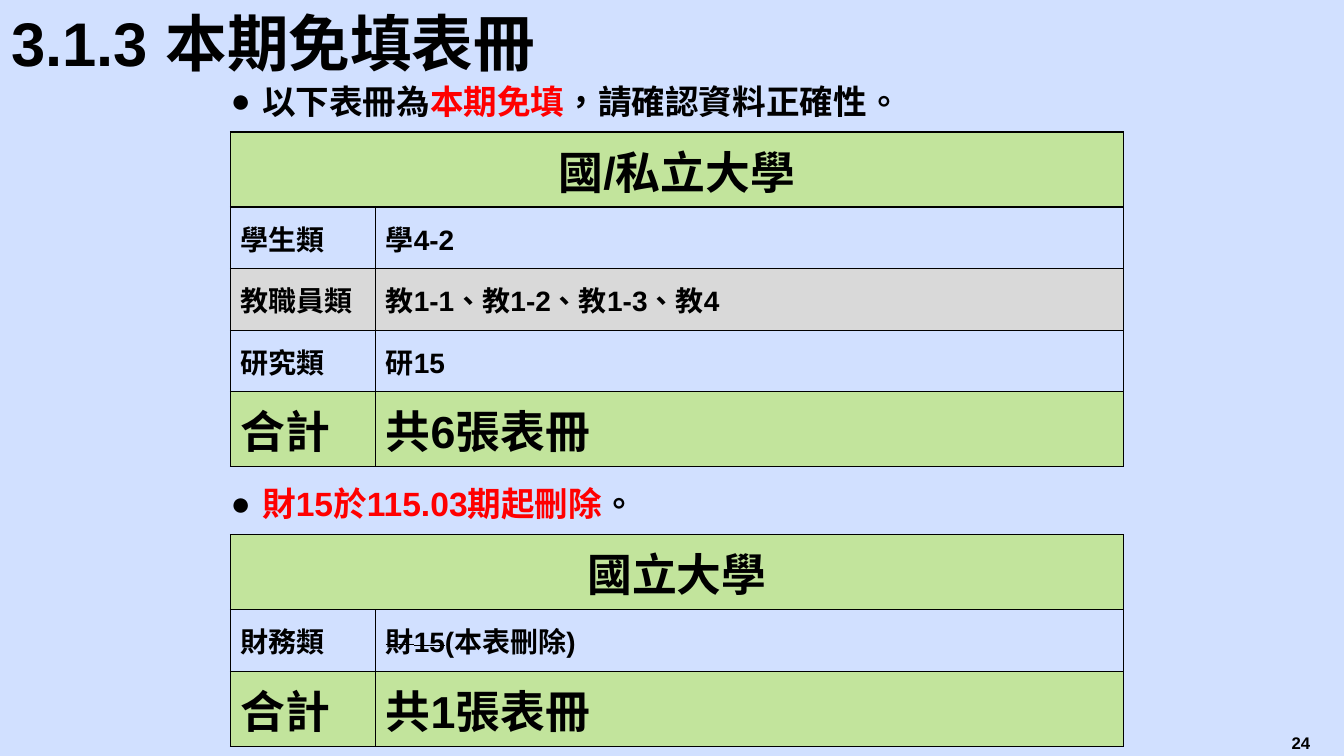
from dataclasses import dataclass

from lxml import etree
from pptx import Presentation
from pptx.dml.color import RGBColor
from pptx.enum.text import MSO_ANCHOR, PP_ALIGN
from pptx.oxml.ns import qn
from pptx.slide import Slide
from pptx.table import _Cell
from pptx.text.text import Font, TextFrame, _Paragraph
from pptx.util import Pt

CENTER, LEFT = PP_ALIGN.CENTER, PP_ALIGN.LEFT
TOP, MIDDLE = MSO_ANCHOR.TOP, MSO_ANCHOR.MIDDLE

BLACK = RGBColor(0x00, 0x00, 0x00)
RED = RGBColor(0xFF, 0x00, 0x00)
PALE_BLUE = RGBColor(0xD1, 0xE0, 0xFF)
GREEN = RGBColor(0xC2, 0xE4, 0x9C)
GREY = RGBColor(0xD9, 0xD9, 0xD9)

FONT = "Arial"
LANGUAGE = "zh-TW"
HEADING_SIZE, BODY_SIZE = 32, 20
ROW_HEIGHTS = {HEADING_SIZE: 53.6, BODY_SIZE: 44}
COLUMN_WIDTHS = (103.7, 534.2)
TABLE_LEFT = 164.6
BULLET_INDENT = 22.5


@dataclass(frozen=True)
class Span:
    text: str
    color: RGBColor = BLACK
    strike: bool = False


@dataclass(frozen=True)
class Row:
    category: str
    forms: tuple[Span, ...]
    fill: RGBColor | None = None
    size: int = BODY_SIZE


@dataclass(frozen=True)
class Section:
    note_top: float
    note: tuple[Span, ...]
    table_top: float
    heading: str
    rows: tuple[Row, ...]


def total_row(text: str) -> Row:
    return Row("合計", (Span(text),), GREEN, HEADING_SIZE)


SECTIONS = (
    Section(
        51.1,
        (Span("以下表冊為"), Span("本期免填", RED), Span("，請確認資料正確性。")),
        94.3,
        "國/私立大學",
        (
            Row("學生類", (Span("學4-2"),)),
            Row("教職員類", (Span("教1-1、教1-2、教1-3、教4"),), GREY),
            Row("研究類", (Span("研15"),)),
            total_row("共6張表冊"),
        ),
    ),
    Section(
        338.4,
        (Span("財15於115.03期起刪除", RED), Span("。")),
        382,
        "國立大學",
        (
            Row("財務類", (Span("財15", strike=True), Span("(本表刪除)"))),
            total_row("共1張表冊"),
        ),
    ),
)


def set_font(font: Font, size: int) -> None:
    font.name = FONT
    font.size = Pt(size)
    font.bold = True


def write(paragraph: _Paragraph, spans: tuple[Span, ...], size: int,
          align: PP_ALIGN = LEFT) -> None:
    paragraph.alignment = align
    set_font(paragraph.font, size)
    for span in spans:
        run = paragraph.add_run()
        run.text = span.text
        set_font(run.font, size)
        run.font.color.rgb = span.color
        # The language selects the Traditional Chinese glyph forms
        properties = run._r.get_or_add_rPr()
        properties.set("lang", LANGUAGE)
        if span.strike:
            properties.set("strike", "sngStrike")


def add_text_frame(slide: Slide, left: float, top: float, width: float,
                   height: float, anchor: MSO_ANCHOR) -> TextFrame:
    box = slide.shapes.add_textbox(Pt(left), Pt(top), Pt(width), Pt(height))
    frame = box.text_frame
    frame.word_wrap = True
    frame.vertical_anchor = anchor
    return frame


def add_bullet(paragraph: _Paragraph) -> None:
    properties = paragraph._p.get_or_add_pPr()
    properties.set("marL", str(Pt(BULLET_INDENT)))
    properties.set("indent", str(-Pt(BULLET_INDENT)))
    bullet_color = etree.SubElement(properties, qn("a:buClr"))
    etree.SubElement(bullet_color, qn("a:srgbClr"), val=str(BLACK))
    etree.SubElement(properties, qn("a:buFont"), typeface=FONT)
    etree.SubElement(properties, qn("a:buChar"), char="●")


def style_cell(cell: _Cell, fill: RGBColor | None) -> None:
    properties = cell._tc.get_or_add_tcPr()
    for side in ("a:lnL", "a:lnR", "a:lnT", "a:lnB"):
        border = etree.SubElement(properties, qn(side), w=str(Pt(1)))
        solid = etree.SubElement(border, qn("a:solidFill"))
        etree.SubElement(solid, qn("a:srgbClr"), val=str(BLACK))
    if fill is None:
        cell.fill.background()
    else:
        cell.fill.solid()
        cell.fill.fore_color.rgb = fill


def add_section(slide: Slide, section: Section) -> None:
    # Bulleted note above the table
    note = add_text_frame(slide, 157.7, section.note_top, 481, 42.5, MIDDLE)
    add_bullet(note.paragraphs[0])
    write(note.paragraphs[0], section.note, 24)

    # Table grid, with row heights that follow the text size
    sizes = [HEADING_SIZE] + [row.size for row in section.rows]
    heights = [ROW_HEIGHTS[size] for size in sizes]
    table = slide.shapes.add_table(
        len(heights), len(COLUMN_WIDTHS), Pt(TABLE_LEFT),
        Pt(section.table_top), Pt(sum(COLUMN_WIDTHS)), Pt(sum(heights))).table
    table.first_row = table.horz_banding = False
    for column, width in zip(table.columns, COLUMN_WIDTHS):
        column.width = Pt(width)
    for table_row, height in zip(table.rows, heights):
        table_row.height = Pt(height)

    # Heading across both columns
    heading = table.cell(0, 0)
    heading.merge(table.cell(0, 1))
    for cell in table.rows[0].cells:
        style_cell(cell, GREEN)
    write(heading.text_frame.paragraphs[0], (Span(section.heading),),
          HEADING_SIZE, CENTER)

    # Categories and their forms
    for index, row in enumerate(section.rows, start=1):
        for column, spans in enumerate(((Span(row.category),), row.forms)):
            cell = table.cell(index, column)
            style_cell(cell, row.fill)
            cell.vertical_anchor = MIDDLE
            write(cell.text_frame.paragraphs[0], spans, row.size)


def main() -> None:
    presentation = Presentation()
    presentation.slide_width, presentation.slide_height = Pt(960), Pt(540)
    slide = presentation.slides.add_slide(presentation.slide_layouts[6])
    slide.background.fill.solid()
    slide.background.fill.fore_color.rgb = PALE_BLUE

    # Page number
    page_number = add_text_frame(slide, 898.6, 519.8, 61.2, 20.2, TOP)
    write(page_number.paragraphs[0], (Span("24"),), 12, CENTER)

    # Title
    title = add_text_frame(slide, 1, 9.4, 632.9, 48.2, MIDDLE)
    title.paragraphs[0].line_spacing = 0.9
    write(title.paragraphs[0], (Span("3.1.3 本期免填表冊"),), 44)

    for section in SECTIONS:
        add_section(slide, section)

    presentation.save("out.pptx")


if __name__ == "__main__":
    main()
